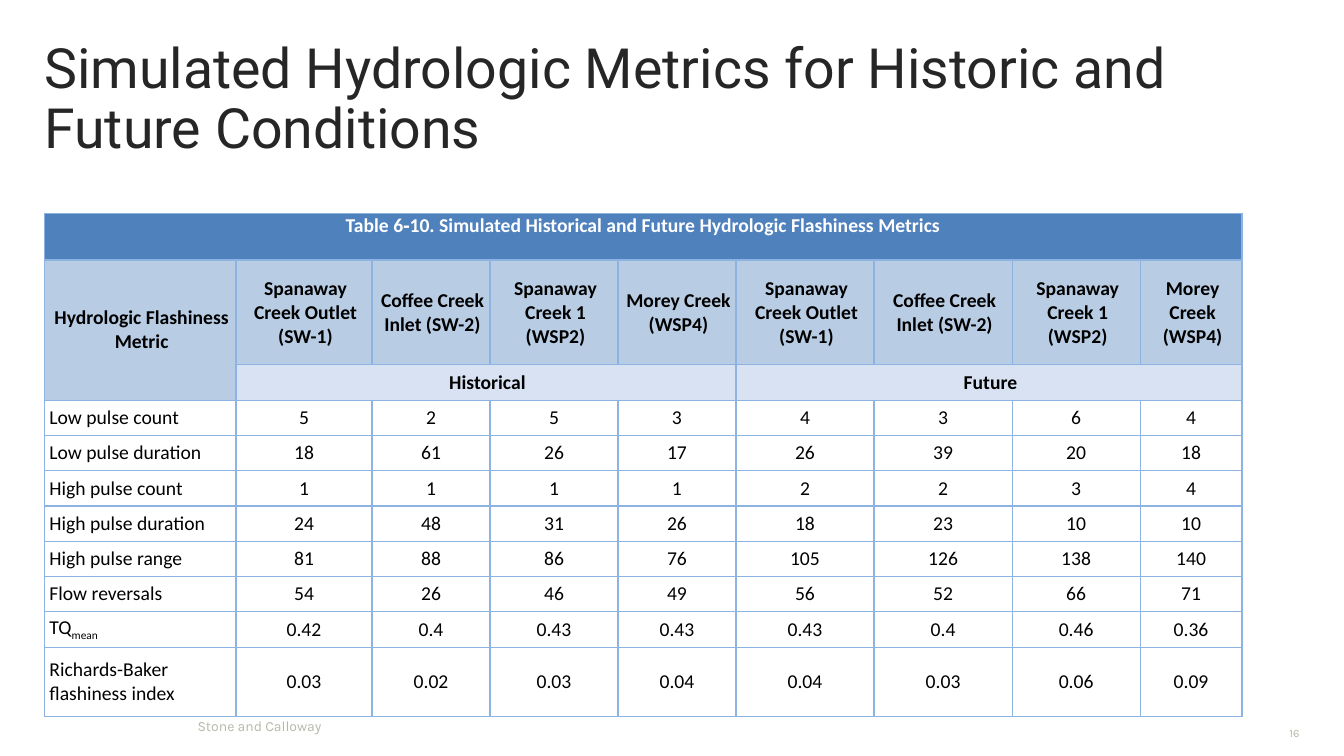
from dataclasses import dataclass
from typing import Any, Optional

from lxml import etree
from pptx import Presentation
from pptx import util as u
from pptx.dml.color import RGBColor
from pptx.enum import text
from pptx.oxml import ns

INK = RGBColor(0x26, 0x26, 0x26)
BLACK = RGBColor(0, 0, 0)
WHITE = RGBColor(0xFF, 0xFF, 0xFF)
FOOTER_GREY = RGBColor(0xB7, 0xB7, 0xA9)
CAPTION_BLUE = RGBColor(0x4F, 0x81, 0xBD)
SITE_BLUE = RGBColor(0xB8, 0xCC, 0xE4)
PERIOD_BLUE = RGBColor(0xD9, 0xE2, 0xF3)
GRID_BLUE = RGBColor(0x8D, 0xB3, 0xE2)

LEFT, CENTER, RIGHT = text.PP_ALIGN.LEFT, text.PP_ALIGN.CENTER, text.PP_ALIGN.RIGHT
TOP, MIDDLE = text.MSO_ANCHOR.TOP, text.MSO_ANCHOR.MIDDLE


@dataclass(frozen=True)
class Label:
    words: str
    left: float
    top: float
    width: float
    height: float
    font: str
    size: float
    color: RGBColor
    align: Any = LEFT
    line_spacing: float = 1.0


@dataclass(frozen=True)
class CellStyle:
    fill: Optional[RGBColor] = None
    color: RGBColor = BLACK
    bold: bool = False
    align: Any = CENTER
    anchor: Any = MIDDLE
    spacing: int = 2
    indent: float = 0


@dataclass(frozen=True)
class Metric:
    name: str
    values: str
    subscript: str = ""


LABELS = [
    Label("Simulated Hydrologic Metrics for Historic and Future Conditions",
          0.44, 0.5, 12.58, 1, "Roboto", 39.6, INK, line_spacing=0.9),
    Label("Stone and Calloway", 1.96, 7.09, 8.83, 0.23, "Karla", 10, FOOTER_GREY),
    Label("16", 12.33, 7.15, 0.56, 0.25, "Karla", 8, FOOTER_GREY, RIGHT),
]

CAPTION = CellStyle(CAPTION_BLUE, WHITE, True, anchor=TOP, spacing=3)
SITE = CellStyle(SITE_BLUE, bold=True, spacing=3, indent=0.03)
PERIOD = CellStyle(PERIOD_BLUE, bold=True, spacing=3, indent=0.03)
METRIC_NAME = CellStyle(align=LEFT)
VALUE = CellStyle()

SITES = ["Spanaway Creek Outlet (SW-1)", "Coffee Creek Inlet (SW-2)",
         "Spanaway Creek 1 (WSP2)", "Morey Creek (WSP4)"]
PERIODS = ["Historical", "Future"]
METRICS = [
    Metric("Low pulse count", "5 2 5 3 4 3 6 4"),
    Metric("Low pulse duration", "18 61 26 17 26 39 20 18"),
    Metric("High pulse count", "1 1 1 1 2 2 3 4"),
    Metric("High pulse duration", "24 48 31 26 18 23 10 10"),
    Metric("High pulse range", "81 88 86 76 105 126 138 140"),
    Metric("Flow reversals", "54 26 46 49 56 52 66 71"),
    Metric("TQ", "0.42 0.4 0.43 0.43 0.43 0.4 0.46 0.36", "mean"),
    Metric("Richards-Baker flashiness index",
           "0.03 0.02 0.03 0.04 0.04 0.03 0.06 0.09"),
]
COLUMN_WIDTHS = [1.9, 1.35, 1.17, 1.27, 1.17, 1.37, 1.37, 1.27, 1.01]
ROW_HEIGHTS = [0.46, 1.04] + [0.35] * 8 + [0.69]
FIRST_METRIC_ROW = 3


def apply(target: Any, formats: dict[str, Any]) -> None:
    for attribute, value in formats.items():
        setattr(target, attribute, value)


def add_run(paragraph: Any, words: str, font: str, size: float,
            color: RGBColor, bold: bool = False) -> Any:
    run = paragraph.add_run()
    run.text = words
    apply(run.font, {"name": font, "size": u.Pt(size), "bold": bold})
    run.font.color.rgb = color
    return run


def add_label(slide: Any, label: Label) -> None:
    box = slide.shapes.add_textbox(u.Inches(label.left), u.Inches(label.top),
                                   u.Inches(label.width), u.Inches(label.height))
    frame = box.text_frame
    apply(frame, {"word_wrap": True, "vertical_anchor": MIDDLE,
                  "margin_left": 0, "margin_right": 0,
                  "margin_top": u.Inches(0.05), "margin_bottom": u.Inches(0.05)})
    paragraph = frame.paragraphs[0]
    apply(paragraph, {"alignment": label.align, "line_spacing": label.line_spacing})
    add_run(paragraph, label.words, label.font, label.size, label.color)


def add_borders(cell: Any) -> None:
    properties = cell._tc.get_or_add_tcPr()
    for side in ("lnL", "lnR", "lnT", "lnB"):
        line = etree.SubElement(properties, ns.qn(f"a:{side}"), w=str(u.Pt(1)))
        solid = etree.SubElement(line, ns.qn("a:solidFill"))
        etree.SubElement(solid, ns.qn("a:srgbClr"), val=str(GRID_BLUE))


def fill_cell(cell: Any, words: str, style: CellStyle, subscript: str = "") -> None:
    apply(cell, {"vertical_anchor": style.anchor,
                 "margin_left": u.Inches(0.05), "margin_right": u.Inches(0.05),
                 "margin_top": 0, "margin_bottom": 0})
    if style.fill is not None:
        cell.fill.solid()
        cell.fill.fore_color.rgb = style.fill
    paragraph = cell.text_frame.paragraphs[0]
    apply(paragraph, {"alignment": style.align,
                      "space_before": u.Pt(style.spacing),
                      "space_after": u.Pt(style.spacing)})
    if style.indent:
        paragraph._p.get_or_add_pPr().set("marL", str(u.Inches(style.indent)))
    add_run(paragraph, words, "Calibri", 14, style.color, style.bold)
    if subscript:
        lowered = add_run(paragraph, subscript, "Calibri", 14, style.color, style.bold)
        lowered._r.get_or_add_rPr().set("baseline", "-25000")


def add_metrics_table(slide: Any) -> None:
    table = slide.shapes.add_table(
        len(ROW_HEIGHTS), len(COLUMN_WIDTHS), u.Inches(0.44), u.Inches(2.12),
        u.Inches(sum(COLUMN_WIDTHS)), u.Inches(sum(ROW_HEIGHTS))).table
    apply(table, {"first_row": False, "horz_banding": False})
    for column, width in zip(table.columns, COLUMN_WIDTHS):
        column.width = u.Inches(width)
    for row, height in zip(table.rows, ROW_HEIGHTS):
        row.height = u.Inches(height)
    for cell in table.iter_cells():
        add_borders(cell)
        cell.fill.background()

    table.cell(0, 0).merge(table.cell(0, len(COLUMN_WIDTHS) - 1))
    fill_cell(table.cell(0, 0),
              "Table 6‑10. Simulated Historical and Future Hydrologic Flashiness Metrics",
              CAPTION)
    table.cell(1, 0).merge(table.cell(2, 0))
    fill_cell(table.cell(1, 0), "Hydrologic Flashiness Metric", SITE)
    for column, site in enumerate(SITES * len(PERIODS), start=1):
        fill_cell(table.cell(1, column), site, SITE)
    for index, period in enumerate(PERIODS):
        first = 1 + index * len(SITES)
        table.cell(2, first).merge(table.cell(2, first + len(SITES) - 1))
        fill_cell(table.cell(2, first), period, PERIOD)

    for row, metric in enumerate(METRICS, start=FIRST_METRIC_ROW):
        fill_cell(table.cell(row, 0), metric.name, METRIC_NAME, metric.subscript)
        for column, value in enumerate(metric.values.split(), start=1):
            fill_cell(table.cell(row, column), value, VALUE)


def main() -> None:
    deck = Presentation()
    apply(deck, {"slide_width": u.Inches(13.33), "slide_height": u.Inches(7.5)})
    slide = deck.slides.add_slide(deck.slide_layouts[6])
    for label in LABELS:
        add_label(slide, label)
    add_metrics_table(slide)
    deck.save("out.pptx")


if __name__ == "__main__":
    main()
